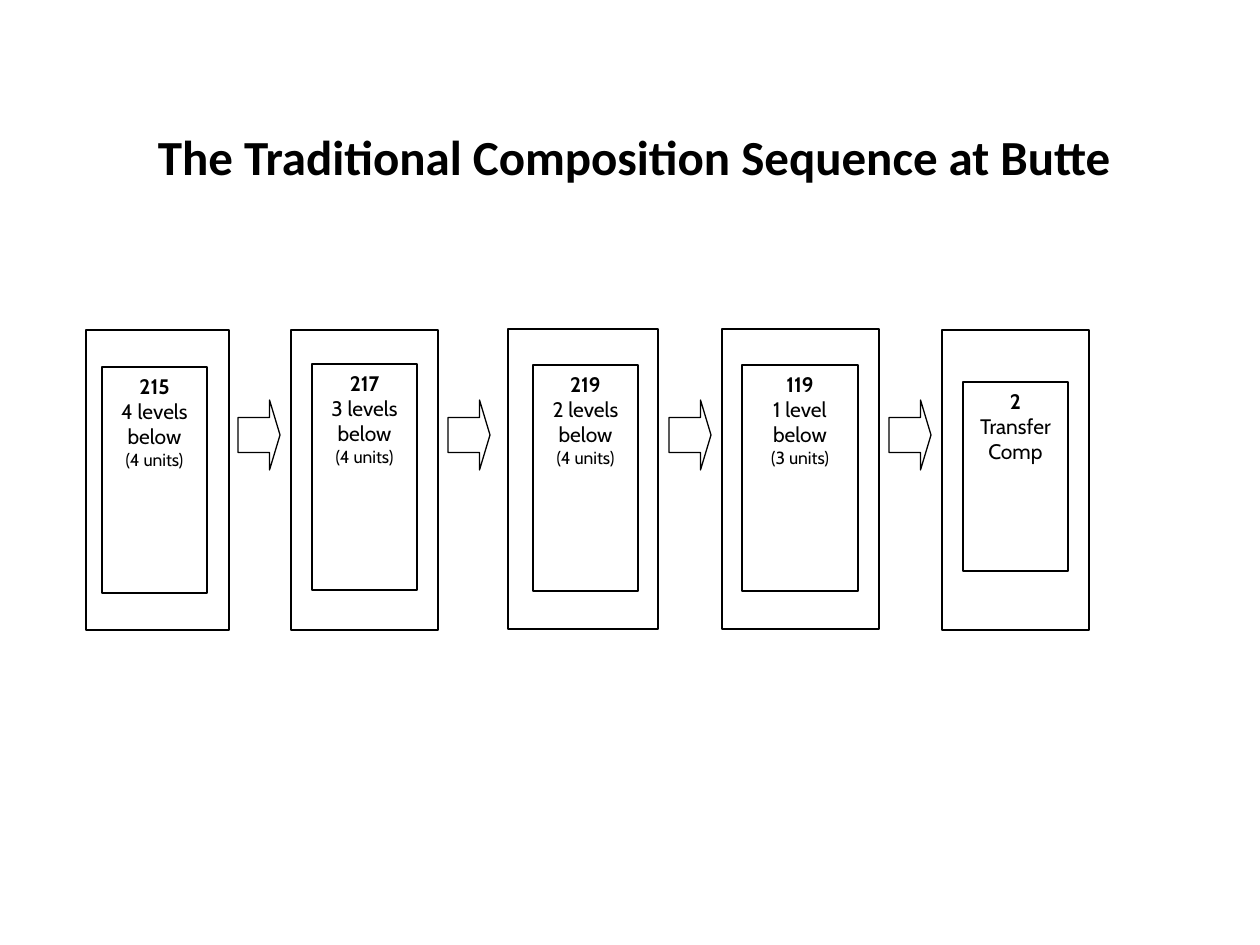
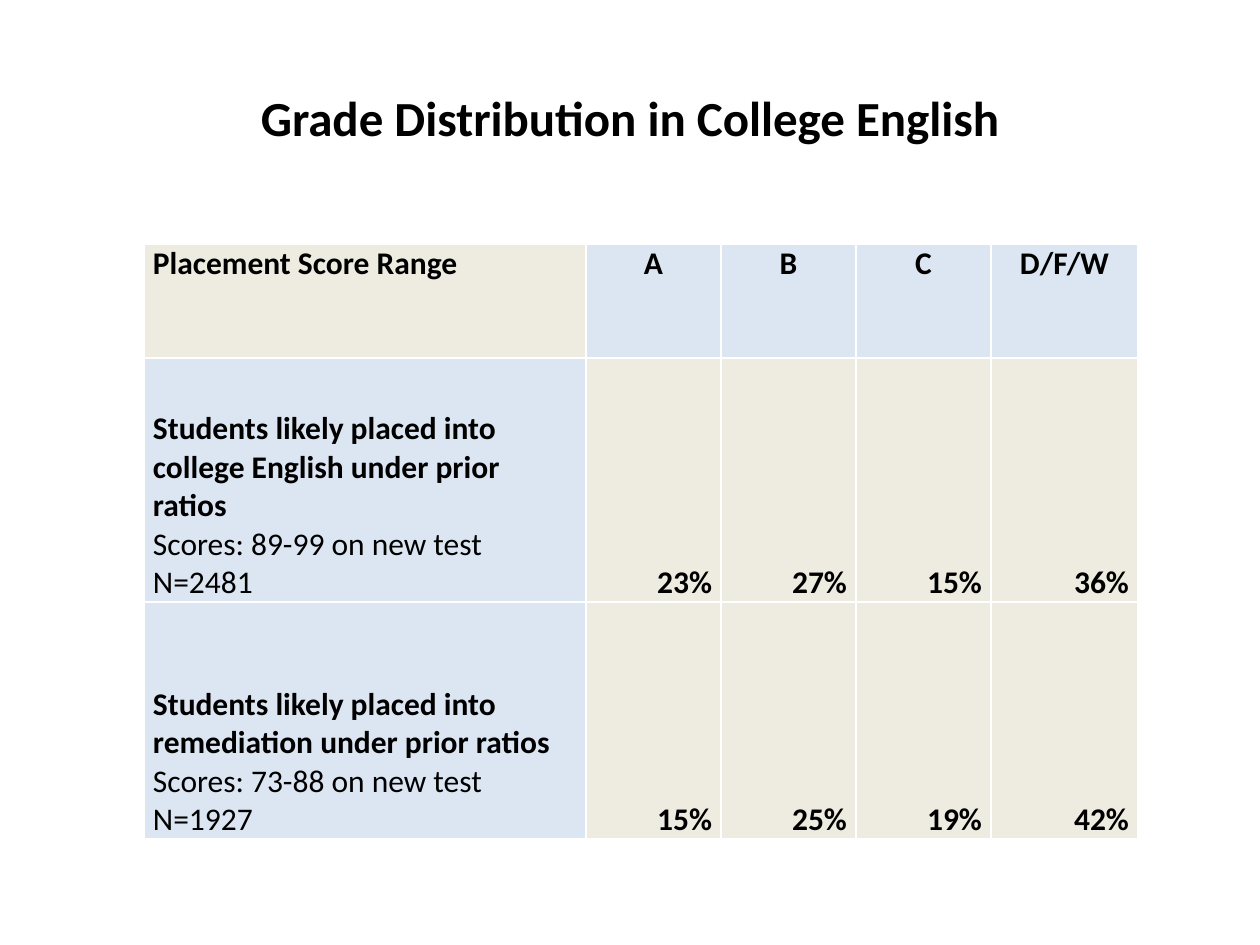
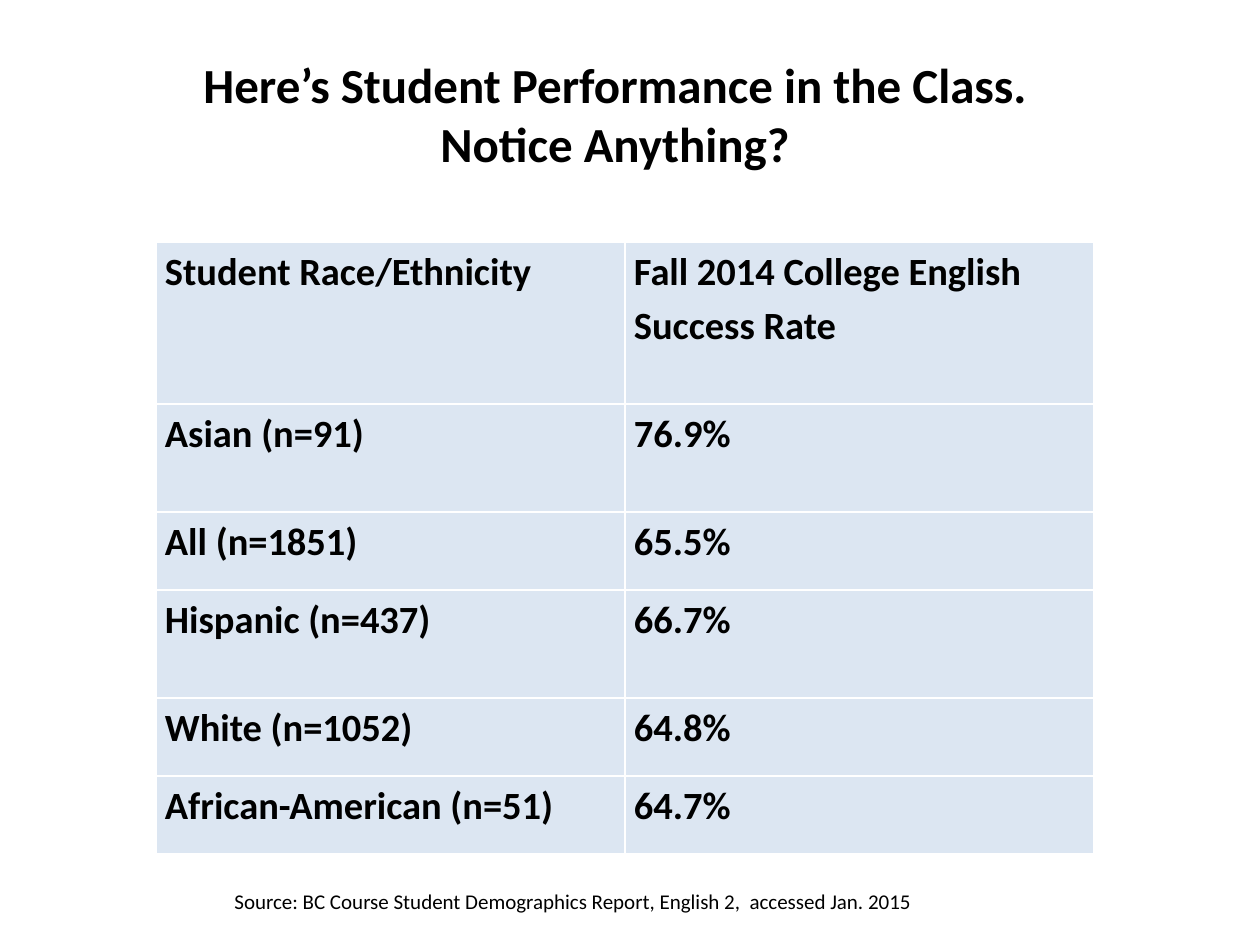
"""Build three slides on a composition course sequence and its results."""
from dataclasses import dataclass
from typing import Any

from pptx import Presentation
from pptx.dml.color import RGBColor as Rgb
from pptx.enum.shapes import MSO_SHAPE as Kind
from pptx.enum.text import MSO_ANCHOR as Anchor, MSO_AUTO_SIZE as Fit, PP_ALIGN as Align
from pptx.util import Emu, Pt

HUES = {"ink": "000000", "page": "FFFFFF", "sand": "EEECE1", "sky": "DCE6F2"}
SCALE = 914400 / 126
TITLE = {"name": "Calibri", "size": Pt(28), "bold": True}
GRADE = {"name": "Calibri", "size": Pt(18), "bold": True}
RATE = {"name": "Calibri", "size": Pt(22), "bold": True}
NOTE = {"name": "Calibri", "size": Pt(12), "bold": False}
HEAD = {"name": "Cabin", "size": Pt(12), "bold": True}
LEVEL = HEAD | {"bold": False}
UNIT = LEVEL | {"size": Pt(10)}


@dataclass(frozen=True)
class Box:
    """A place on the slide in px."""
    left: int
    top: int
    width: int
    height: int


@dataclass(frozen=True)
class Line:
    """A paragraph with its font and layout."""
    text: str
    font: dict[str, Any]
    align: Align = Align.LEFT
    space: float = 1.0


@dataclass(frozen=True)
class Stage:
    """A course with its frame and card."""
    frame: Box
    card: Box
    texts: tuple[str, ...]


@dataclass(frozen=True)
class Cell:
    """The lines, fill and anchor of a table cell."""
    lines: list[Line]
    fill: str
    anchor: Anchor = Anchor.TOP


STAGES = [
    Stage(Box(86, 330, 143, 300), Box(102, 367, 105, 226), ("215", "4 levels below", "(4 units)")),
    Stage(Box(291, 330, 147, 300), Box(312, 364, 105, 226), ("217", "3 levels below", "(4 units)")),
    Stage(Box(508, 329, 150, 300), Box(533, 365, 105, 226), ("219", "2 levels below", "(4 units)")),
    Stage(Box(722, 329, 157, 300), Box(742, 365, 116, 226), ("119", "1 level below", "(3 units)")),
    Stage(Box(942, 330, 147, 300), Box(963, 382, 105, 189), ("2", "Transfer Comp")),
]
ARROWS = [238, 448, 669, 889]
GRADES = [
    ("Students likely placed into college English under prior ratios",
     "Scores: 89-99 on new test N=2481", ("23%", "27%", "15%", "36%")),
    ("Students likely placed into remediation under prior ratios",
     "Scores: 73-88 on new test N=1927", ("15%", "25%", "19%", "42%")),
]
RATES = [
    ("Student Race/Ethnicity", "Fall 2014 College English Success Rate"),
    ("Asian (n=91)", "76.9%"),
    ("All (n=1851)", "65.5%"),
    ("Hispanic (n=437)", "66.7%"),
    ("White (n=1052)", "64.8%"),
    ("African-American (n=51)", "64.7%"),
]


def px(size: int) -> Emu:
    """Turn px into EMU."""
    return Emu(round(size * SCALE))


def place(box: Box) -> list[Emu]:
    """Give the four lengths of a box in EMU."""
    return [px(size) for size in (box.left, box.top, box.width, box.height)]


def hue(name: str) -> Rgb:
    """Look up a colour."""
    return Rgb.from_string(HUES[name])


def style(item: Any, look: dict[str, Any]) -> None:
    """Set each format value on an item."""
    for key, value in look.items():
        setattr(item, key, value)


def write(frame: Any, lines: list[Line]) -> None:
    """Fill a text frame with lines."""
    for index, line in enumerate(lines):
        para = frame.add_paragraph() if index else frame.paragraphs[0]
        style(para, {"alignment": line.align, "line_spacing": line.space})
        run = para.add_run()
        run.text = line.text
        style(run.font, line.font)
        run.font.color.rgb = hue("ink")


def start(deck: Any, text: str, box: Box, foot: int = 6) -> Any:
    """Add a slide with its title."""
    slide = deck.slides.add_slide(deck.slide_layouts[5])
    title = slide.shapes.title
    style(title, dict(zip(("left", "top", "width", "height"), place(box))))
    style(title.text_frame, {"auto_size": Fit.NONE, "word_wrap": True,
                             "vertical_anchor": Anchor.MIDDLE, "margin_bottom": px(foot)})
    write(title.text_frame, [Line(text, TITLE, Align.CENTER)])
    return slide


def draw(slide: Any, kind: Kind, box: Box, width: float) -> Any:
    """Draw a white shape with a black line."""
    shape = slide.shapes.add_shape(kind, *place(box))
    shape.shadow.inherit = False
    shape.fill.solid()
    shape.fill.fore_color.rgb = hue("page")
    shape.line.color.rgb = hue("ink")
    shape.line.width = Pt(width)
    return shape


def grid(slide: Any, left: int, top: int, cols: list[int], rows: list[int],
         cells: list[list[Cell]]) -> None:
    """Draw a table from its sizes and cells."""
    box = Box(left, top, sum(cols), sum(rows))
    table = slide.shapes.add_table(len(rows), len(cols), *place(box)).table
    table.horz_banding = False
    for col, size in zip(table.columns, cols):
        col.width = px(size)
    for row, size, items in zip(table.rows, rows, cells):
        row.height = px(size)
        for cell, item in zip(row.cells, items):
            style(cell, {"margin_left": px(9), "margin_right": px(9), "margin_top": 0,
                         "margin_bottom": 0, "vertical_anchor": item.anchor})
            cell.fill.solid()
            cell.fill.fore_color.rgb = hue(item.fill)
            write(cell.text_frame, item.lines)


def courses(deck: Any) -> None:
    """Build the course sequence slide."""
    slide = start(deck, "The Traditional Composition Sequence at Butte", Box(66, 86, 1136, 140))
    for stage in STAGES:
        draw(slide, Kind.RECTANGLE, stage.frame, 1)
        card = draw(slide, Kind.RECTANGLE, stage.card, 0.75)
        style(card.text_frame, {"word_wrap": True, "vertical_anchor": Anchor.TOP})
        fonts = (HEAD, LEVEL, UNIT)
        write(card.text_frame,
              [Line(text, font, Align.CENTER) for text, font in zip(stage.texts, fonts)])
    for left in ARROWS:
        arrow = draw(slide, Kind.RIGHT_ARROW, Box(left, 400, 42, 70), 0.75)
        arrow.adjustments[1] = 0.25


def grades(deck: Any) -> None:
    """Build the grade table slide."""
    slide = start(deck, "Grade Distribution in College English", Box(63, 38, 1134, 158))
    cells = [[Cell([Line("Placement Score Range", GRADE)], "sand")]]
    cells[0] += [Cell([Line(text, GRADE, Align.CENTER)], "sky")
                 for text in ("A", "B", "C", "D/F/W")]
    for group, score, shares in GRADES:
        lines = [Line(group, GRADE), Line(score, GRADE | {"bold": False})]
        cells.append([Cell(lines, "sky", Anchor.BOTTOM)]
                     + [Cell([Line(share, GRADE, Align.RIGHT)], "sand", Anchor.BOTTOM)
                        for share in shares])
    grid(slide, 144, 244, [442, 135, 135, 135, 147], [114, 244, 237], cells)


def rates(deck: Any) -> None:
    """Build the success rate slide."""
    slide = start(deck, "Here’s Student Performance in the Class. Notice Anything?",
                  Box(135, 50, 960, 204), 84)
    cells = [[Cell([Line(text, RATE, space=1.15)], "sky") for text in row] for row in RATES]
    grid(slide, 156, 242, [469, 469], [162, 108, 78, 108, 78, 78], cells)
    note = slide.shapes.add_textbox(*place(Box(222, 882, 788, 63))).text_frame
    note.word_wrap = True
    write(note, [Line("Source: BC Course Student Demographics Report, English 2,  "
                      "accessed Jan. 2015", NOTE)])


def main() -> None:
    """Build and save the deck."""
    deck = Presentation()
    style(deck, {"slide_width": px(1260), "slide_height": px(945)})
    for build in (courses, grades, rates):
        build(deck)
    deck.save("out.pptx")


if __name__ == "__main__":
    main()
